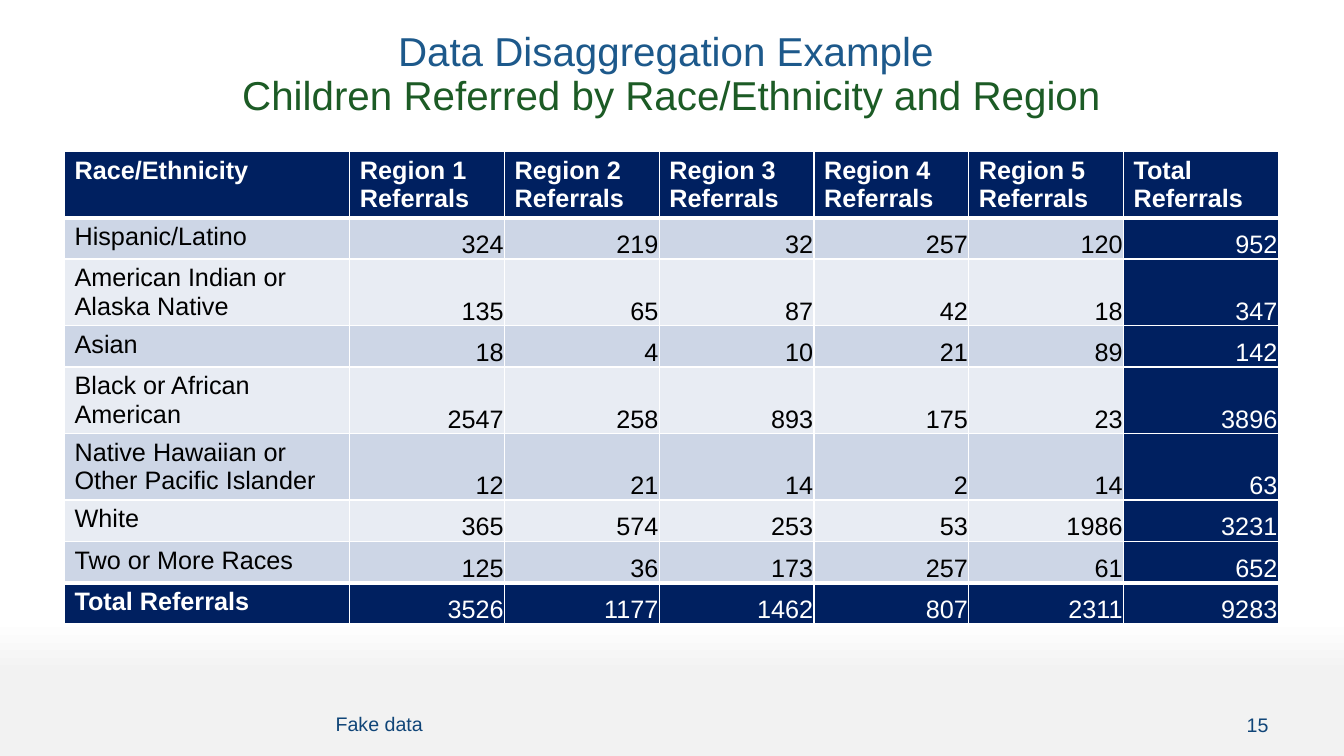
from copy import deepcopy
from lxml import etree
from pptx import Presentation
from pptx.dml.color import RGBColor
from pptx.enum.text import MSO_ANCHOR, PP_ALIGN
from pptx.oxml.ns import qn
from pptx.util import Inches, Pt

MIDDLE, BOTTOM = MSO_ANCHOR.MIDDLE, MSO_ANCHOR.BOTTOM
LEFT, CENTER, RIGHT = PP_ALIGN.LEFT, PP_ALIGN.CENTER, PP_ALIGN.RIGHT
NAVY, WHITE, BLACK = "002060", "FFFFFF", "000000"
BANDS = ["E8ECF3", "CDD6E6"]
EDGE, WIDE = 0.64, 12.04  # left margin and content width, inches


def style(run, size, color, bold=False):
    font = run.font
    font.name, font.size, font.bold = "Arial", Pt(size), bold
    font.color.rgb = RGBColor.from_string(color)


def border(cell, widths):
    props = cell._tc.get_or_add_tcPr()
    for spot, (side, width) in enumerate(widths.items()):
        line = etree.Element(qn("a:ln" + side), w=str(Pt(width)))
        fill = etree.SubElement(line, qn("a:solidFill"))
        etree.SubElement(fill, qn("a:srgbClr"), val=WHITE)
        props.insert(spot, line)


deck = Presentation()
deck.slide_width, deck.slide_height = Inches(13.33), Inches(7.5)
slide = deck.slides.add_slide(deck.slide_layouts[5])

# Background fading to grey at the foot
back = slide.background.fill
back.gradient()
back.gradient_angle = 270
for stop, (place, color) in zip(back.gradient_stops, [(0.82, WHITE), (0.89, "F2F2F2")]):
    stop.position = place
    stop.color.rgb = RGBColor.from_string(color)

# Title in two colours
title = slide.shapes.title
title.left, title.top = Inches(EDGE), Inches(0.25)
title.width, title.height = Inches(WIDE), Inches(1)
frame = title.text_frame
frame.text = "Data Disaggregation Example \vChildren Referred by Race/Ethnicity and Region"
frame.vertical_anchor = MIDDLE
head = frame.paragraphs[0]
head.alignment, head.line_spacing = CENTER, 0.9
for run, color in zip(head.runs, ["1D598B", "1C5B25"]):
    style(run, 28.8, color)
head._p.find(qn("a:br")).insert(0, deepcopy(head.runs[0]._r.rPr))

# Referral table
data = [
    ["Race/Ethnicity"] + [f"Region {n} Referrals" for n in range(1, 6)] + ["Total Referrals"],
    ["Hispanic/Latino", 324, 219, 32, 257, 120, 952],
    ["American Indian or Alaska Native", 135, 65, 87, 42, 18, 347],
    ["Asian", 18, 4, 10, 21, 89, 142],
    ["Black or African American", 2547, 258, 893, 175, 23, 3896],
    ["Native Hawaiian or Other Pacific Islander", 12, 21, 14, 2, 14, 63],
    ["White", 365, 574, 253, 53, 1986, 3231],
    ["Two or More Races", 125, 36, 173, 257, 61, 652],
    ["Total Referrals", 3526, 1177, 1462, 807, 2311, 9283],
]
rows, cols = len(data), len(data[0])
last, end = rows - 1, cols - 1
first, high = 2.83, 0.41
table = slide.shapes.add_table(rows, cols, Inches(EDGE), Inches(1.5),
                               Inches(WIDE), Inches(rows * high)).table
for c, col in enumerate(table.columns):
    col.width = Inches((WIDE - first) / end if c else first)
rules = [3 if r in (1, last) else 1 for r in range(rows + 1)]

for r, values in enumerate(data):
    table.rows[r].height = Inches(high)
    for c, value in enumerate(values):
        cell = table.cell(r, c)
        cell.text = str(value)
        dark = r in (0, last) or c == end
        cell.fill.solid()
        cell.fill.fore_color.rgb = RGBColor.from_string(NAVY if dark else BANDS[r % 2])
        border(cell, {"L": 1, "R": 1, "T": rules[r], "B": rules[r + 1]})
        para = cell.text_frame.paragraphs[0]
        style(para.runs[0], 18, WHITE if dark else BLACK, r == 0 or (r == last and c == 0))
        if r and c:
            para.alignment = RIGHT
            cell.vertical_anchor = BOTTOM
            cell.margin_left = cell.margin_right = cell.margin_top = Inches(0.01)
            cell.margin_bottom = 0

# Footer note and page number
for text, left, width, height, align in [("Fake data", 3.23, 8.1, 0.54, LEFT),
                                         ("15", 11.33, 1.35, 0.55, RIGHT)]:
    box = slide.shapes.add_textbox(Inches(left), Inches(6.91), Inches(width), Inches(height))
    frame = box.text_frame
    frame.text = text
    frame.word_wrap, frame.vertical_anchor = True, MIDDLE
    frame.paragraphs[0].alignment = align
    style(frame.paragraphs[0].runs[0], 14, "104578")

deck.save("out.pptx")
